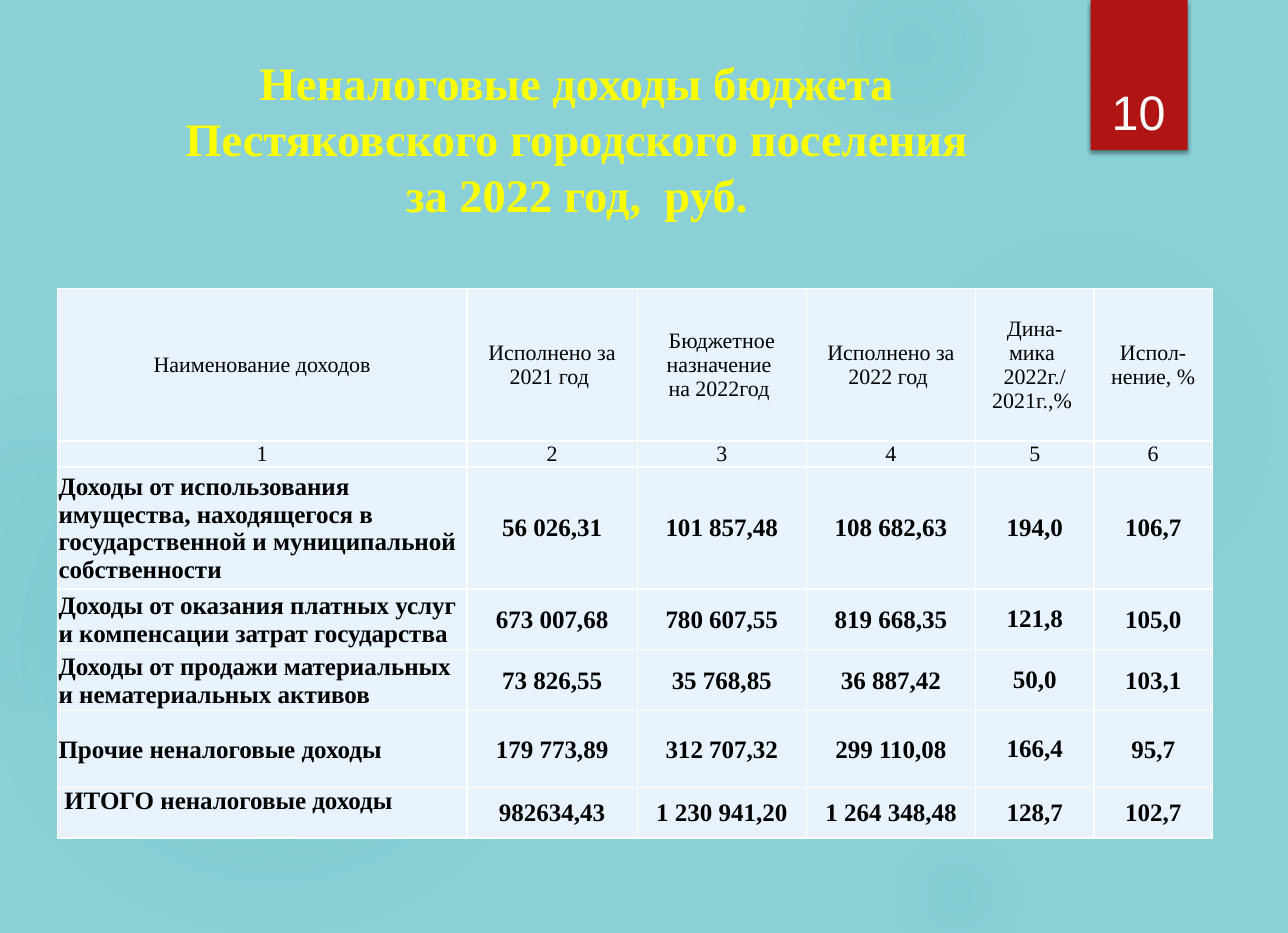
from typing import NamedTuple

from lxml.etree import SubElement
from pptx import Presentation
from pptx.dml.color import RGBColor
from pptx.enum.shapes import MSO_SHAPE
from pptx.enum.text import MSO_ANCHOR, MSO_AUTO_SIZE, PP_ALIGN
from pptx.oxml import parse_xml
from pptx.oxml.ns import nsdecls, qn
from pptx.slide import Slide
from pptx.table import _Cell as Cell
from pptx.text.text import TextFrame
from pptx.util import Inches, Pt

SKY = RGBColor(0x8A, 0xD0, 0xD6)
TEAL = RGBColor(0x50, 0xB9, 0xC1)
RED = RGBColor(0xB0, 0x15, 0x13)
YELLOW = RGBColor(0xFF, 0xFF, 0x00)
WHITE = RGBColor(0xFF, 0xFF, 0xFF)
BLACK = RGBColor(0x00, 0x00, 0x00)
PALE = RGBColor(0xE8, 0xF3, 0xFF)
SERIF = "Times New Roman"


class Glow(NamedTuple):
    left: float
    top: float
    width: float
    height: float
    core: int
    mid: int
    edge: int


class Pad(NamedTuple):
    side: float
    top: float


GLOWS = [
    Glow(7.87, 2.02, 3.52, 3.4, 7, 6, 69),
    Glow(7.1, -0.55, 2, 1.93, 14, 7, 73),
    Glow(7.87, 7.35, 1.24, 1.19, 9, 5, 66),
    Glow(-0.19, 3.22, 5.23, 5.05, 11, 10, 75),
    Glow(-1.05, 3.49, 2.95, 2.85, 8, 8, 72),
]
WIDTHS = [3.63, 1.51, 1.5, 1.5, 1.05, 1.05]
HEIGHTS = [1.35, 0.23, 1.08, 0.54, 0.54, 0.68, 0.45]
ROWS = [
    ["Наименование доходов", "Исполнено за 2021 год ",
     "Бюджетное назначение \nна 2022год ", "Исполнено за 2022 год ",
     "Дина-\nмика \n2022г./ 2021г.,% ", "Испол-нение, %"],
    ["1", "2", "3", "4", "5", "6"],
    ["Доходы от использования имущества, находящегося в "
     "государственной и муниципальной собственности",
     "56 026,31", "101 857,48", "108 682,63", "194,0", "106,7"],
    ["Доходы от оказания платных услуг и компенсации затрат государства",
     "673 007,68", "780 607,55", "819 668,35", "121,8", "105,0"],
    ["Доходы от продажи материальных и нематериальных активов",
     "73 826,55", "35 768,85", "36 887,42", "50,0", "103,1"],
    ["Прочие неналоговые доходы",
     "179 773,89", "312 707,32", "299 110,08", "166,4", "95,7"],
    ["ИТОГО неналоговые доходы",
     "982634,43", "1 230 941,20", "1 264 348,48", "128,7", "102,7"],
]
HEAD_ROWS = 2
TOTAL = len(ROWS) - 1
TREND = 4
WIDE, TIGHT, BROAD = Pad(0.06, 0), Pad(0.01, 0.01), Pad(0.09, 0)


def style_text(frame: TextFrame, font: str, size: float, color: RGBColor,
               bold: bool, align: PP_ALIGN) -> None:
    for para in frame.paragraphs:
        para.alignment = align
        para.font.name = font
        para.font.size = Pt(size)
        para.font.bold = bold
        para.font.color.rgb = color


def draw_glow(slide: Slide, glow: Glow) -> None:
    """Add a round spot that fades out towards its rim."""
    spot = slide.shapes.add_shape(
        MSO_SHAPE.OVAL, *(Inches(n) for n in glow[:4]))
    spot.shadow.inherit = False
    spot.line.fill.background()
    spot.fill.gradient()
    stops = "".join(
        f'<a:gs pos="{pos * 1000}"><a:srgbClr val="{TEAL}">'
        f'<a:alpha val="{alpha * 1000}"/></a:srgbClr></a:gs>'
        for pos, alpha in ((0, glow.core), (36, glow.mid), (glow.edge, 0)))
    fade = parse_xml(
        f'<a:gradFill {nsdecls("a")}><a:gsLst>{stops}</a:gsLst>'
        '<a:path path="circle">'
        '<a:fillToRect l="50000" t="50000" r="50000" b="50000"/>'
        '</a:path></a:gradFill>')
    props = spot.element.spPr
    props.replace(props.find(qn("a:gradFill")), fade)


def draw_ribbon(slide: Slide) -> None:
    ribbon = slide.shapes.add_shape(
        MSO_SHAPE.RECTANGLE, Inches(9.67), 0, Inches(0.86), Inches(1.33))
    ribbon.fill.solid()
    ribbon.fill.fore_color.rgb = RED
    ribbon.line.fill.background()
    ribbon.shadow.inherit = False
    effects = ribbon.element.spPr.find(qn("a:effectLst"))
    effects.append(parse_xml(
        f'<a:outerShdw {nsdecls("a")} blurRad="{Pt(3)}" dist="{Pt(2)}" '
        f'dir="5400000"><a:srgbClr val="{BLACK}">'
        '<a:alpha val="45000"/></a:srgbClr></a:outerShdw>'))

    box = slide.shapes.add_textbox(
        Inches(9.7), Inches(0.36), Inches(0.79), Inches(0.93))
    frame = box.text_frame
    frame.word_wrap = True
    frame.vertical_anchor = MSO_ANCHOR.BOTTOM
    frame.text = "10"
    style_text(frame, "Arial", 30.9, WHITE, False, PP_ALIGN.CENTER)


def draw_title(slide: Slide) -> None:
    title = slide.shapes.title
    title.left, title.top = Inches(0.98), Inches(0.43)
    title.width, title.height = Inches(8.27), Inches(1.78)
    frame = title.text_frame
    frame.word_wrap = True
    frame.auto_size = MSO_AUTO_SIZE.NONE
    frame.vertical_anchor = MSO_ANCHOR.TOP
    para = frame.paragraphs[0]
    para.add_run().text = "Неналоговые доходы бюджета Пестяковского городского поселения"
    para.add_line_break()
    para.add_run().text = "за 2022 год,  руб."
    style_text(frame, SERIF, 29.7, YELLOW, True, PP_ALIGN.CENTER)
    title.element.getparent().append(title.element)


def add_borders(cell: Cell) -> None:
    props = cell._tc.get_or_add_tcPr()
    for spot, side in enumerate(("lnL", "lnR", "lnT", "lnB")):
        line = SubElement(props, qn(f"a:{side}"), w=str(Pt(1)))
        fill = SubElement(line, qn("a:solidFill"))
        SubElement(fill, qn("a:srgbClr"), val=str(WHITE))
        props.insert(spot, line)


def fill_cell(cell: Cell, text: str, row: int, col: int) -> None:
    head, total = row < HEAD_ROWS, row == TOTAL
    label = col == 0 and not head
    pad = WIDE if head or total else BROAD if col == TREND else TIGHT
    cell.margin_left = cell.margin_right = Inches(pad.side)
    cell.margin_top, cell.margin_bottom = Inches(pad.top), 0
    cell.vertical_anchor = MSO_ANCHOR.TOP if label and total else MSO_ANCHOR.MIDDLE
    cell.fill.solid()
    cell.fill.fore_color.rgb = PALE
    cell.text = text
    style_text(cell.text_frame, SERIF, 14 if head else 16, BLACK, not head,
               PP_ALIGN.LEFT if label else PP_ALIGN.CENTER)
    add_borders(cell)


def draw_table(slide: Slide) -> None:
    table = slide.shapes.add_table(
        len(ROWS), len(WIDTHS), Inches(0.51), Inches(2.56),
        Inches(sum(WIDTHS)), Inches(sum(HEIGHTS))).table
    table.first_row = table.horz_banding = False
    for column, width in zip(table.columns, WIDTHS):
        column.width = Inches(width)
    for row, (height, texts) in enumerate(zip(HEIGHTS, ROWS)):
        table.rows[row].height = Inches(height)
        for col, text in enumerate(texts):
            fill_cell(table.cell(row, col), text, row, col)


def main() -> None:
    deck = Presentation()
    deck.slide_width, deck.slide_height = Inches(11.42), Inches(8.27)
    slide = deck.slides.add_slide(deck.slide_layouts[5])
    slide.background.fill.solid()
    slide.background.fill.fore_color.rgb = SKY
    for glow in GLOWS:
        draw_glow(slide, glow)
    draw_ribbon(slide)
    draw_title(slide)
    draw_table(slide)
    deck.save("out.pptx")


if __name__ == "__main__":
    main()
